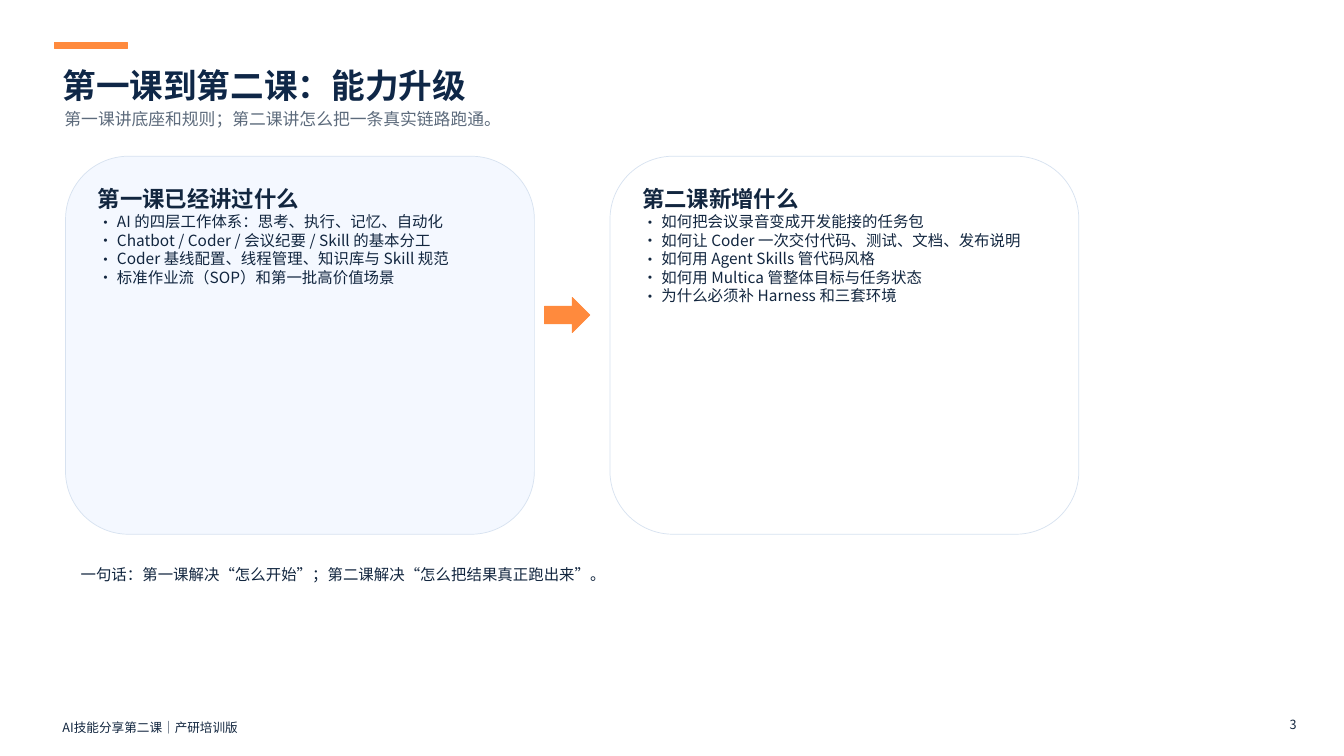
"""Build the slide comparing lesson one with lesson two."""
import pptx
import pptx.util
import pptx.dml.color
import pptx.enum.shapes
import pptx.enum.text
import pptx.oxml.ns
import lxml.etree

Inches = pptx.util.Inches
Pt = pptx.util.Pt
RGBColor = pptx.dml.color.RGBColor
SHAPE = pptx.enum.shapes.MSO_SHAPE
ALIGN = pptx.enum.text.PP_ALIGN
qn = pptx.oxml.ns.qn

FONT = "Noto Sans CJK SC"
NAVY = RGBColor(0x0F, 0x27, 0x47)
INK = RGBColor(0x12, 0x26, 0x3F)
GREY = RGBColor(0x5D, 0x6B, 0x7C)
ORANGE = RGBColor(0xFF, 0x8A, 0x3D)
PALE = RGBColor(0xF4, 0xF8, 0xFF)
WHITE = RGBColor(0xFF, 0xFF, 0xFF)
EDGE = RGBColor(0xD7, 0xE2, 0xF0)

TITLE = "第一课到第二课：能力升级"
NOTES = [
    ("第一课讲底座和规则；第二课讲怎么把一条真实链路跑通。",
     (0.56, 1.02, 8.2, 0.28), 12, GREY, ALIGN.LEFT),
    ("一句话：第一课解决“怎么开始”；第二课解决“怎么把结果真正跑出来”。",
     (0.72, 5.55, 9.9, 0.28), 11, INK, ALIGN.LEFT),
    ("AI技能分享第二课｜产研培训版",
     (0.54, 7.08, 3.6, 0.18), 9, INK, ALIGN.LEFT),
    ("3", (12.5, 7.05, 0.44, 0.18), 9, INK, ALIGN.RIGHT),
]
CARDS = [
    ("第一课已经讲过什么", PALE, [
        "AI 的四层工作体系：思考、执行、记忆、自动化",
        "Chatbot / Coder / 会议纪要 / Skill 的基本分工",
        "Coder 基线配置、线程管理、知识库与 Skill 规范",
        "标准作业流（SOP）和第一批高价值场景",
    ]),
    ("第二课新增什么", WHITE, [
        "如何把会议录音变成开发能接的任务包",
        "如何让 Coder 一次交付代码、测试、文档、发布说明",
        "如何用 Agent Skills 管代码风格",
        "如何用 Multica 管整体目标与任务状态",
        "为什么必须补 Harness 和三套环境",
    ]),
]
BAR = (0.54, 0.42, 0.72, 0.06)
ARROW = (5.4, 2.95, 0.45, 0.35)
LEFT, TOP, WIDE, HIGH, STEP = 0.65, 1.55, 4.65, 3.75, 5.4
INSET = 0.18
HANG = 0.19


def place(item, box):
    """Move an item to a box given in inches."""
    item.left, item.top, item.width, item.height = map(Inches, box)


def draw(slide, kind, box, fill, edge):
    """Draw a flat preset shape."""
    item = slide.shapes.add_shape(kind, *map(Inches, box))
    item.shadow.inherit = False
    item.fill.solid()
    item.fill.fore_color.rgb = fill
    item.line.color.rgb = edge
    item.line.width = Pt(0.5)


def frame(item, side, top):
    """Set the margins and wrapping of a text frame."""
    text = item.text_frame
    text.word_wrap = True
    text.auto_size = pptx.enum.text.MSO_AUTO_SIZE.NONE
    text.vertical_anchor = pptx.enum.text.MSO_ANCHOR.TOP
    text.margin_left = text.margin_right = Inches(side)
    text.margin_top = text.margin_bottom = Inches(top)
    return text


def style(para, size, color, bold=False, align=ALIGN.LEFT):
    """Format a paragraph and its runs."""
    para.alignment = align
    para.space_before = para.space_after = Pt(0)
    para.line_spacing = Pt(size * 1.2)
    for run in para.runs:
        run.font.size = Pt(size)
        run.font.bold = bold
        run.font.color.rgb = color
        run.font.name = FONT
        east = lxml.etree.SubElement(run.font._element, qn("a:ea"))
        east.set("typeface", FONT)


def bullet(para, mark):
    """Give a paragraph a hanging bullet, or none."""
    props = para._p.get_or_add_pPr()
    hang = Inches(HANG) if mark else 0
    props.set("marL", str(hang))
    props.set("indent", str(-hang))
    if mark:
        font = lxml.etree.SubElement(props, qn("a:buFont"))
        font.set("typeface", FONT)
        lxml.etree.SubElement(props, qn("a:buChar")).set("char", mark)
    else:
        lxml.etree.SubElement(props, qn("a:buNone"))


def main():
    """Lay out the slide and save it."""
    deck = pptx.Presentation()
    deck.slide_width, deck.slide_height = Inches(13.33), Inches(7.5)
    slide = deck.slides.add_slide(deck.slide_layouts[3])
    head, *lists = slide.placeholders

    draw(slide, SHAPE.RECTANGLE, BAR, ORANGE, ORANGE)
    place(head, (0.54, 0.58, 6.6, 0.45))
    text = frame(head, 0.08, 0.06)
    text.text = TITLE
    style(text.paragraphs[0], 24, NAVY, True)

    for i, (name, fill, points) in enumerate(CARDS):
        left = LEFT + i * STEP
        draw(slide, SHAPE.ROUNDED_RECTANGLE, (left, TOP, WIDE, HIGH), fill, EDGE)
        body = lists[i]
        place(body, (left + INSET, TOP + INSET,
                     WIDE - 2 * INSET, HIGH - 2 * INSET))
        slide.shapes._spTree.append(body._element)
        text = frame(body, 0.14, 0.11)
        text.text = "\n".join([name, *points])
        for j, para in enumerate(text.paragraphs):
            bullet(para, "•" if j else "")
            style(para, 11 if j else 16, INK, j == 0)

    draw(slide, SHAPE.RIGHT_ARROW, ARROW, ORANGE, ORANGE)
    for words, box, size, color, align in NOTES:
        note = slide.shapes.add_textbox(*map(Inches, box))
        text = frame(note, 0.08, 0.06)
        text.text = words
        style(text.paragraphs[0], size, color, align=align)

    deck.save("out.pptx")


if __name__ == "__main__":
    main()
